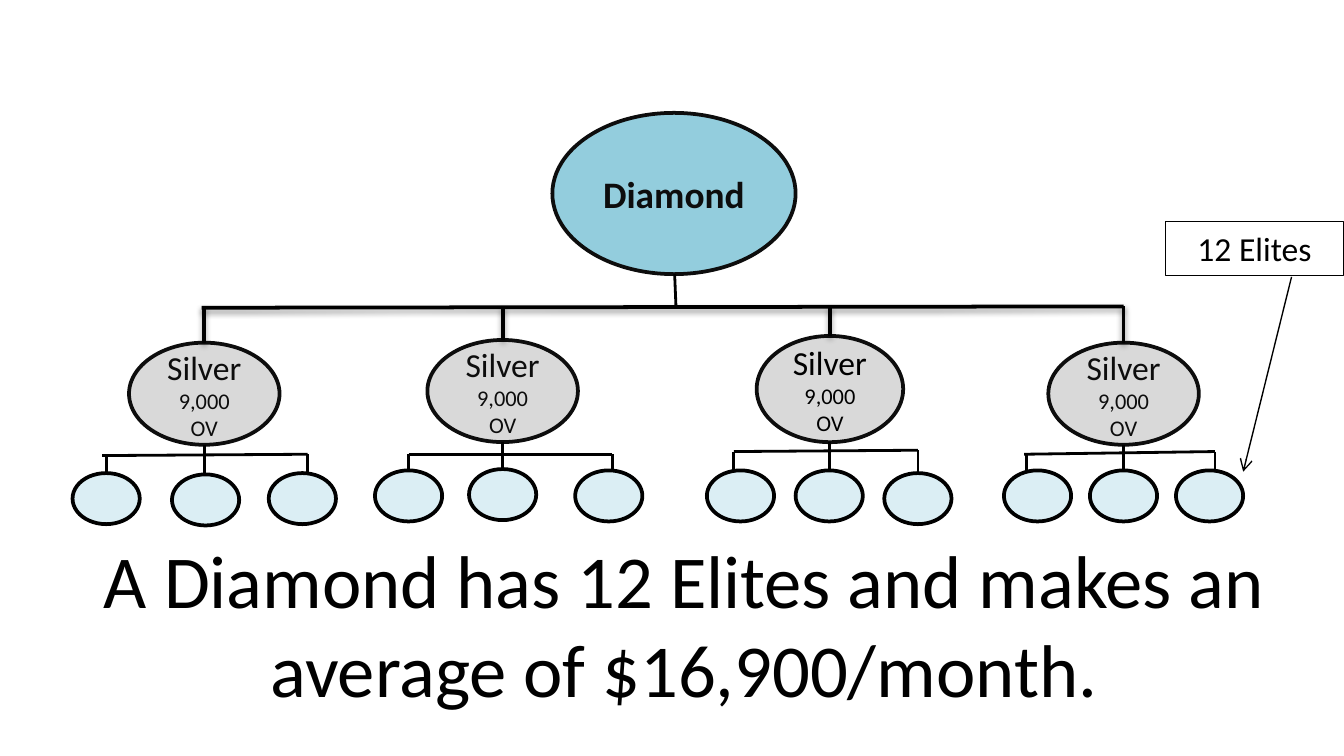
from dataclasses import dataclass

from lxml import etree
from pptx import Presentation
from pptx.dml.color import RGBColor
from pptx.enum.shapes import MSO_CONNECTOR, MSO_SHAPE
from pptx.enum.text import MSO_ANCHOR, MSO_AUTO_SIZE, PP_ALIGN
from pptx.oxml.ns import qn
from pptx.util import Inches, Pt

STRAIGHT = MSO_CONNECTOR.STRAIGHT
OVAL, RECTANGLE = MSO_SHAPE.OVAL, MSO_SHAPE.RECTANGLE
ELITE_SHAPE = MSO_SHAPE.FLOWCHART_CONNECTOR
CENTER = PP_ALIGN.CENTER
TOP, MIDDLE = MSO_ANCHOR.TOP, MSO_ANCHOR.MIDDLE
GROW = MSO_AUTO_SIZE.SHAPE_TO_FIT_TEXT


@dataclass(frozen=True)
class Theme:
    font: str = "Calibri"
    black: str = "000000"
    ink: str = "0D0D0D"
    diamond: str = "93CDDD"
    silver: str = "D9D9D9"
    elite: str = "DBEEF4"
    statement_size: int = 40
    diamond_size: int = 20
    label_size: int = 18
    volume_size: int = 12
    heavy: float = 2
    medium: float = 1.5
    light: float = 0.75
    hairline: float = 0.5


@dataclass(frozen=True)
class Branch:
    oval: tuple
    bar: tuple
    drops: tuple
    elites: tuple
    text_color: str = Theme.ink


TRUNK_Y = 2.28
ELITE_SIZE = (0.5, 0.38)
BRANCHES = (
    Branch((0.96, 2.55, 1.12, 0.76), (0.76, 3.39, 2.29, 3.38), (0.79, 2.29),
           ((0.54, 3.52), (1.28, 3.53), (2, 3.52))),
    Branch((3.18, 2.53, 1.12, 0.76), (3.04, 3.38, 4.55, 3.38), (3.04, 4.56),
           ((2.79, 3.5), (3.49, 3.49), (4.28, 3.5))),
    Branch((5.63, 2.5, 1.09, 0.79), (5.46, 3.36, 6.83, 3.35), (5.46, 6.83),
           ((5.26, 3.5), (5.92, 3.5), (6.58, 3.52)), Theme.black),
    Branch((7.8, 2.55, 1.12, 0.76), (7.62, 3.38, 9.04, 3.36), (7.64, 9.04),
           ((7.47, 3.5), (8.11, 3.5), (8.75, 3.5))),
)


def write(text_frame, text, size, color, bold=False, first=False):
    paragraph = text_frame.paragraphs[0] if first else text_frame.add_paragraph()
    paragraph.alignment = CENTER
    run = paragraph.add_run()
    run.text = text
    run.font.name = Theme.font
    run.font.size = Pt(size)
    run.font.bold = bold
    run.font.color.rgb = RGBColor.from_string(color)


class SlideBuilder:
    """Draws styled elements on the current slide."""

    def __init__(self, slide, theme):
        self.slide = slide
        self.theme = theme

    def shape(self, kind, box, fill=None, line=Theme.black, width=Theme.heavy, anchor=MIDDLE):
        shape = self.slide.shapes.add_shape(kind, *map(Inches, box))
        shape.shadow.inherit = False
        if fill:
            shape.fill.solid()
            shape.fill.fore_color.rgb = RGBColor.from_string(fill)
        else:
            shape.fill.background()
        shape.line.color.rgb = RGBColor.from_string(line)
        shape.line.width = Pt(width)
        shape.text_frame.word_wrap = True
        shape.text_frame.vertical_anchor = anchor
        return shape

    def line(self, points, width=Theme.medium, shadow=False, arrow=False):
        connector = self.slide.shapes.add_connector(STRAIGHT, *map(Inches, points))
        connector.line.color.rgb = RGBColor.from_string(self.theme.black)
        connector.line.width = Pt(width)
        properties = connector._element.spPr
        if arrow:
            etree.SubElement(properties.find(qn("a:ln")), qn("a:tailEnd"), type="arrow")
        effects = etree.SubElement(properties, qn("a:effectLst"))
        if shadow:
            outer = etree.SubElement(effects, qn("a:outerShdw"), blurRad=str(Pt(3.1)),
                                     dist=str(Pt(1.6)), dir="5400000", rotWithShape="0")
            color = etree.SubElement(outer, qn("a:srgbClr"), val=self.theme.black)
            etree.SubElement(color, qn("a:alpha"), val="38000")

    def statement(self, box, text):
        text_frame = self.slide.shapes.add_textbox(*map(Inches, box)).text_frame
        text_frame.word_wrap = True
        text_frame.auto_size = GROW
        write(text_frame, text, self.theme.statement_size, self.theme.black, first=True)

    def diamond(self, box, text):
        shape = self.shape(OVAL, box, self.theme.diamond, self.theme.ink)
        write(shape.text_frame, text, self.theme.diamond_size, self.theme.ink,
              bold=True, first=True)

    def callout(self, box, text):
        shape = self.shape(RECTANGLE, box, width=self.theme.hairline, anchor=TOP)
        shape.text_frame.auto_size = GROW
        write(shape.text_frame, text, self.theme.label_size, self.theme.black, first=True)

    def branch(self, branch):
        left, top, width, height = branch.oval
        center = left + width / 2
        silver = self.shape(OVAL, branch.oval, self.theme.silver, self.theme.ink)
        write(silver.text_frame, "Silver", self.theme.label_size, branch.text_color, first=True)
        write(silver.text_frame, "9,000 OV", self.theme.volume_size, branch.text_color)
        self.line((center, TRUNK_Y, center, top), self.theme.heavy, shadow=True)
        self.line(branch.bar)
        first, middle, last = branch.elites
        self.line((center, top + height, center, middle[1]))
        bar_ends = branch.bar[1::2]
        for x, bar_y, elite in zip(branch.drops, bar_ends, (first, last)):
            self.line((x, bar_y, x, elite[1]))
        for position in branch.elites:
            self.shape(ELITE_SHAPE, position + ELITE_SIZE, self.theme.elite)


def main():
    presentation = Presentation()
    presentation.slide_width = Inches(10)
    presentation.slide_height = presentation.slide_width * 9 // 16
    slide = presentation.slides.add_slide(presentation.slide_layouts[6])
    builder = SlideBuilder(slide, Theme())

    builder.diamond((4.11, 0.84, 1.81, 1.2), "Diamond")
    builder.line((8.36, TRUNK_Y, 1.5, 2.29), Theme.heavy, shadow=True)
    builder.line((5.02, 2.04, 5.03, 2.29))
    for branch in BRANCHES:
        builder.branch(branch)
    builder.statement((0.54, 3.92, 9.1, 1.45),
                      "A Diamond has 12 Elites and makes an average of $16,900/month.")
    builder.callout((8.67, 1.65, 1.33, 0.4), "12 Elites")
    builder.line((9.61, 2.06, 9.25, 3.51), Theme.light, arrow=True)

    presentation.save("out.pptx")


if __name__ == "__main__":
    main()
